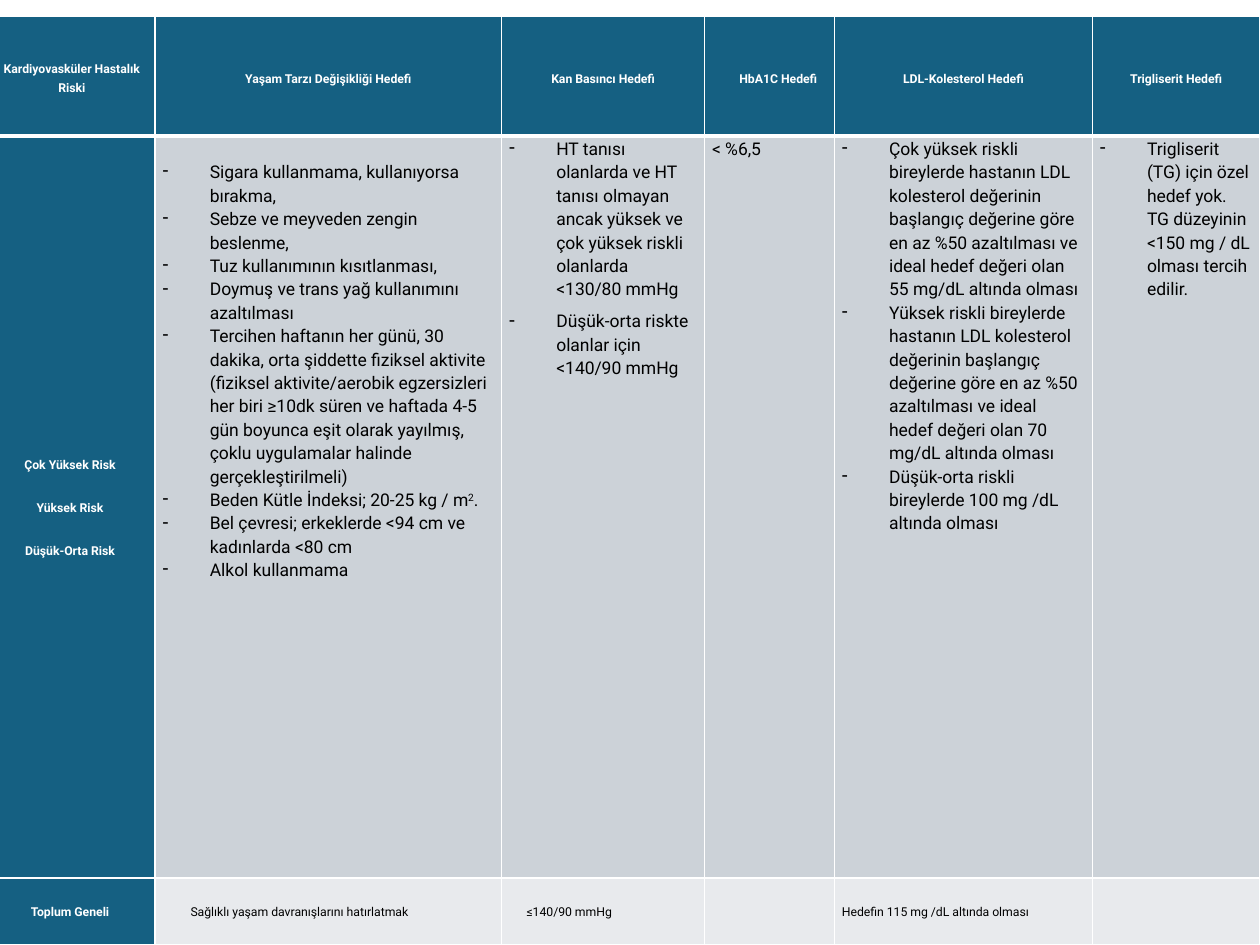
from lxml import etree
from pptx import Presentation
from pptx import util as u
from pptx.dml.color import RGBColor
from pptx.enum import text
from pptx.oxml import ns

# Content: a head is (text, left indent)
HEADS = [
    ("Kardiyovasküler Hastalık Riski", 2),
    ("Yaşam Tarzı Değişikliği Hedefi", 0),
    ("Kan Basıncı Hedefi", 0),
    ("HbA1C Hedefi", 10),
    ("LDL-Kolesterol Hedefi", 0),
    ("Trigliserit Hedefi", 0),
]
RISKS = ["Çok Yüksek Risk", "Yüksek Risk", "Düşük-Orta Risk"]
# A goal is (lines, dash bullets, gap between lines, top margin);
# text between ^ marks is superscript
GOALS = [
    ([
        "Sigara kullanmama, kullanıyorsa bırakma,",
        "Sebze ve meyveden zengin beslenme,",
        "Tuz kullanımının kısıtlanması,",
        "Doymuş ve trans yağ kullanımını azaltılması",
        "Tercihen haftanın her günü, 30 dakika, orta şiddette fiziksel "
        "aktivite (fiziksel aktivite/aerobik egzersizleri her biri ≥10dk "
        "süren ve haftada 4-5 gün boyunca eşit olarak yayılmış, çoklu "
        "uygulamalar halinde gerçekleştirilmeli)",
        "Beden Kütle İndeksi; 20-25 kg / m^2^.",
        "Bel çevresi; erkeklerde <94 cm ve kadınlarda <80 cm",
        "Alkol kullanmama",
    ], True, 0, 13.4),
    ([
        "HT tanısı olanlarda ve HT tanısı olmayan ancak yüksek ve çok "
        "yüksek riskli olanlarda <130/80 mmHg",
        "Düşük-orta riskte olanlar için <140/90 mmHg",
    ], True, 5, 0),
    (["< %6,5"], False, 0, 0),
    ([
        "Çok yüksek riskli bireylerde hastanın LDL kolesterol değerinin "
        "başlangıç değerine göre en az %50 azaltılması ve ideal hedef "
        "değeri olan 55 mg/dL altında olması",
        "Yüksek riskli bireylerde hastanın LDL kolesterol değerinin "
        "başlangıç değerine göre en az %50 azaltılması ve ideal hedef "
        "değeri olan 70 mg/dL altında olması",
        "Düşük-orta riskli bireylerde 100 mg /dL altında olması",
    ], True, 0, 0),
    ([
        "Trigliserit (TG) için özel hedef yok. TG düzeyinin <150 mg / dL "
        "olması tercih edilir.",
    ], True, 0, 0),
]
PUBLIC = "Toplum Geneli"
# A public goal is (text, left indent)
NORMS = [
    ("Sağlıklı yaşam davranışlarını hatırlatmak", 16),
    ("≤140/90 mmHg", 10),
    ("", 0),
    ("Hedefin 115 mg /dL altında olması", 0),
    ("", 0),
]

WIDTHS = [97.2, 198, 116, 74.2, 147.4, 95.8]
HEIGHTS = [68.4, 424, 38.2]
LEFT, TOP = -8.6, 9.4
BLUE, GREY, PALE = "156082", "CCD2D8", "E8EAED"
WHITE, BLACK = "FFFFFF", "000000"
DASH = 27


def color(code):
    return RGBColor.from_string(code)


def edge(cell, side, width):
    line = etree.SubElement(cell._tc.get_or_add_tcPr(), ns.qn("a:ln" + side),
                            w=str(u.Pt(width)))
    fill = etree.SubElement(line, ns.qn("a:solidFill"))
    etree.SubElement(fill, ns.qn("a:srgbClr"), val=WHITE)


def write(cell, lines, size=7, ink=BLACK, bold=False, center=False,
          space=1.15, before=0, after=0, indent=0, dash=False):
    frame = cell.text_frame
    for i, line in enumerate(lines):
        para = frame.add_paragraph() if i else frame.paragraphs[0]
        for j, part in enumerate(line.split("^")):
            run = para.add_run()
            run.text = part
            if j % 2:
                run._r.get_or_add_rPr().set("baseline", "30000")
        props = para._p.get_or_add_pPr()
        props.set("marL", str(u.Pt(DASH if dash else indent)))
        props.set("indent", str(u.Pt(-DASH if dash else 0)))
        if dash:
            etree.SubElement(props, ns.qn("a:buChar"), char="-")
        para.alignment = text.PP_ALIGN.CENTER if center else text.PP_ALIGN.LEFT
        para.line_spacing = space
        if i:
            para.space_before = u.Pt(before)
        if i < len(lines) - 1:
            para.space_after = u.Pt(after)
        font = para.font
        font.name, font.size, font.bold = "Roboto", u.Pt(size), bold
        font.color.rgb = color(ink)


show = Presentation()
show.slide_width, show.slide_height = u.Pt(720), u.Pt(540)
slide = show.slides.add_slide(show.slide_layouts[6])

# Table grid
grid = slide.shapes.add_table(
    len(HEIGHTS), len(WIDTHS), u.Pt(LEFT), u.Pt(TOP),
    u.Pt(sum(WIDTHS)), u.Pt(sum(HEIGHTS))).table
grid.first_row = grid.horz_banding = False
for col, width in zip(grid.columns, WIDTHS):
    col.width = u.Pt(width)
for row, height in zip(grid.rows, HEIGHTS):
    row.height = u.Pt(height)

# Cell fills, margins and borders, with a thick rule under the heads
for r in range(len(HEIGHTS)):
    for c in range(len(WIDTHS)):
        cell = grid.cell(r, c)
        for side in "LRTB":
            edge(cell, side, 3 if (r, side) in ((0, "B"), (1, "T")) else 1)
        cell.fill.solid()
        cell.fill.fore_color.rgb = color(
            BLUE if r == 0 or c == 0 else GREY if r == 1 else PALE)
        cell.margin_left = cell.margin_right = u.Pt(4.3)
        cell.margin_top = cell.margin_bottom = 0
        top = r == 1 and c > 0
        cell.vertical_anchor = (text.MSO_ANCHOR.TOP if top
                                else text.MSO_ANCHOR.MIDDLE)

# Head row and first column
label = dict(ink=WHITE, bold=True, center=True)
for c, (head, indent) in enumerate(HEADS):
    write(grid.cell(0, c), [head], space=u.Pt(11), indent=indent, **label)
write(grid.cell(1, 0), RISKS, before=5, after=10, **label)
write(grid.cell(2, 0), [PUBLIC], **label)

# Goals
for c, (lines, dash, gap, top) in enumerate(GOALS, 1):
    cell = grid.cell(1, c)
    cell.margin_top = u.Pt(top)
    write(cell, lines, size=10, before=gap, dash=dash)
for c, (norm, indent) in enumerate(NORMS, 1):
    if norm:
        write(grid.cell(2, c), [norm], indent=indent)

show.save("out.pptx")
